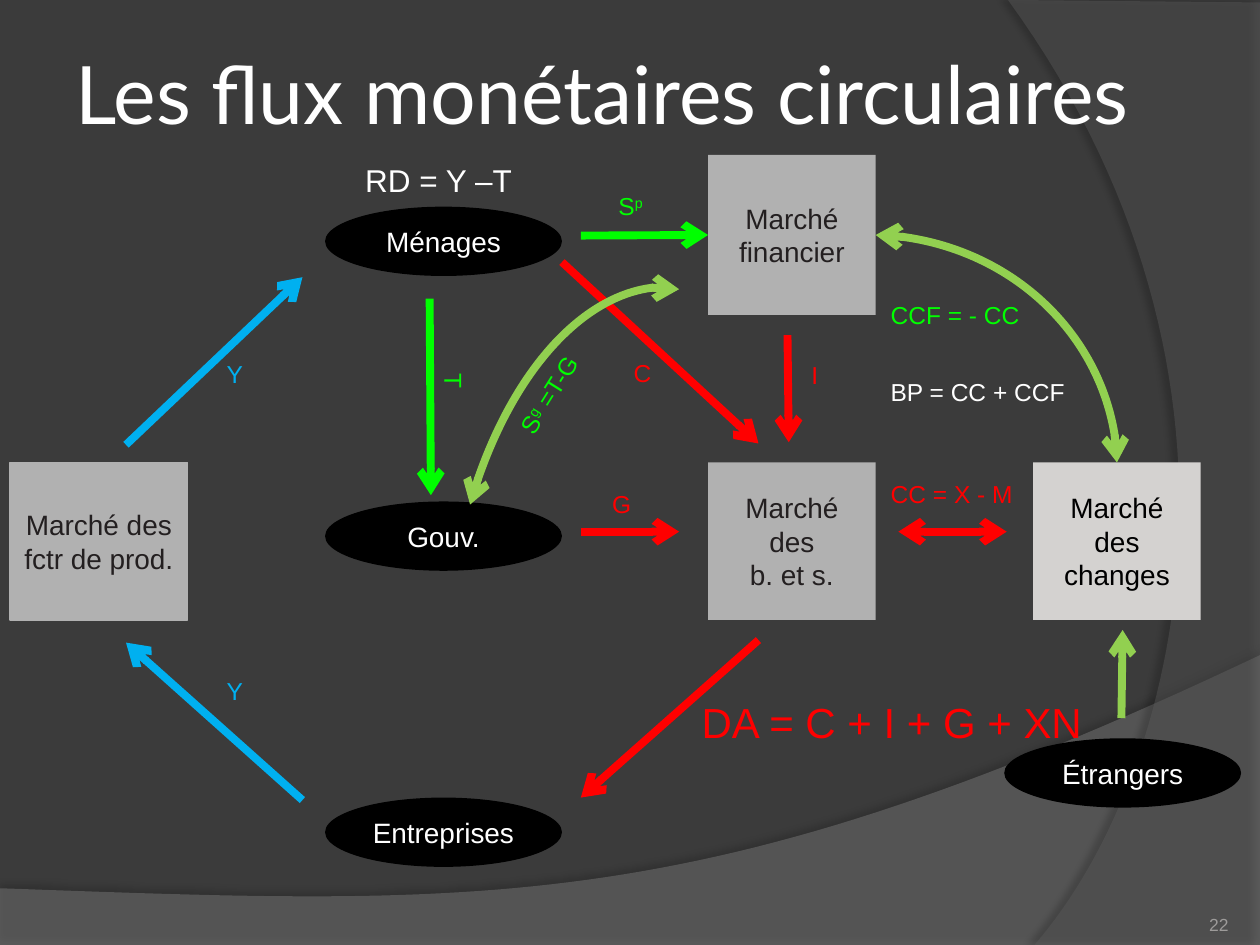
from dataclasses import dataclass
from typing import Any, NamedTuple, Optional

from lxml import etree
from pptx import Presentation
from pptx.dml import color
from pptx.enum import shapes, text
from pptx.oxml import ns
from pptx.util import Inches, Pt


@dataclass(frozen=True)
class Theme:
    font: str = "Arial"
    title_font: str = "Lato"
    back: str = "3B3B3B"
    wave: str = "7F7F7F"
    arc: str = "5E5E5E"
    black: str = "000000"
    white: str = "FFFFFF"
    box: str = "B1B1B1"
    pale_box: str = "D4D2D0"
    box_text: str = "231F20"
    number: str = "9D9B9A"
    red: str = "FF0000"
    green: str = "00FF00"
    lime: str = "92D050"
    blue: str = "00B0F0"
    title_size: float = 46
    sum_size: float = 24
    income_size: float = 18
    node_size: float = 16
    label_size: float = 14
    number_size: float = 10
    arrow_width: float = 4.5


T = Theme()
Point = tuple[float, float]
Box = tuple[float, float, float, float]


class Node(NamedTuple):
    text: str
    at: Box
    fill: str = T.box
    ink: str = T.box_text
    kind: Any = shapes.MSO_SHAPE.RECTANGLE
    outline: Optional[str] = None


class Flow(NamedTuple):
    start: Point
    end: Point
    ink: str
    both: bool = False
    curved: bool = False
    turn: int = 0
    begin_at: Optional[tuple[str, int]] = None
    end_at: Optional[tuple[str, int]] = None


class Label(NamedTuple):
    text: str
    at: Box
    ink: str
    size: float = T.label_size
    font: str = T.font
    turn: int = 0
    wrap: bool = True


class Swoosh(NamedTuple):
    corners: list[Point]
    curve: tuple[Point, Point, Point, Point]
    fill: str
    alpha: int
    shadow_alpha: int
    distance: float
    direction: int


def actor(name: str, left: float, top: float) -> Node:
    return Node(name, (left, top, 1.88, 0.55), T.black, T.white, shapes.MSO_SHAPE.OVAL)


SWOOSHES = [
    Swoosh([(0, 7.5), (10, 7.5)], ((10, 5.2), (5.59, 7.29), (3.91, 7.19), (0, 7.05)),
           T.wave, 45, 35, 3.5, 270),
    Swoosh([(10, 0.02), (10, 7.5)], ((8.21, 7.5), (9.35, 6.19), (10.18, 3), (8, 0)),
           T.arc, 40, 45, 4, 180),
]

NODES = [
    actor("Entreprises", 2.58, 6.33),
    actor("Gouv.", 2.58, 3.98),
    actor("Ménages", 2.58, 1.64),
    actor("Étrangers", 7.97, 5.86),
    Node("Marché des\nb. et s.", (5.62, 3.67, 1.33, 1.25)),
    Node("Marché financier", (5.62, 1.23, 1.33, 1.27)),
    Node("Marché des fctr de prod.", (0.08, 3.67, 1.41, 1.25), outline=T.box),
    Node("Marché des changes", (8.2, 3.67, 1.33, 1.25), T.pale_box, T.black),
]

FLOWS = [
    Flow((3.41, 2.37), (3.42, 3.93), T.green),
    Flow((4.61, 1.87), (5.62, 1.87), T.green, end_at=("Marché financier", 1)),
    Flow((6.25, 2.66), (6.26, 3.51), T.red),
    Flow((6.02, 5.08), (4.61, 6.33), T.red),
    Flow((4.61, 4.22), (5.39, 4.22), T.red),
    Flow((4.46, 2.08), (6.02, 3.52), T.red),
    Flow((2.4, 6.35), (1, 5.1), T.blue),
    Flow((1, 3.53), (2.4, 2.2), T.blue),
    Flow((8.9, 5.7), (8.91, 5), T.lime),
    Flow((7.13, 4.22), (7.99, 4.22), T.red, both=True),
    Flow((6.95, 1.87), (8.87, 3.67), T.lime, both=True, curved=True,
         begin_at=("Marché financier", 3), end_at=("Marché des changes", 0)),
    Flow((3.52, 2.57), (5.6, 3.73), T.lime, both=True, curved=True, turn=285),
]

LABELS = [
    Label("T", (3.22, 3.08, 0.76, 0.34), T.green, turn=90),
    Label("S^p", (4.81, 1.47, 0.51, 0.49), T.green),
    Label("I", (6.34, 2.81, 0.39, 0.33), T.red),
    Label("DA = C + I + G + XN", (5.47, 5.48, 3.44, 0.51), T.red, T.sum_size),
    Label("G", (4.76, 3.83, 0.39, 0.33), T.red),
    Label("C", (4.93, 2.79, 0.34, 0.34), T.red),
    Label("Y", (1.7, 5.32, 0.33, 0.33), T.blue, wrap=False),
    Label("Y", (1.7, 2.8, 0.33, 0.33), T.blue, wrap=False),
    Label("CC = X - M", (6.97, 3.75, 1.18, 0.33), T.red),
    Label("CCF = - CC", (6.97, 2.33, 1.34, 0.34), T.green),
    Label("BP = CC + CCF", (6.97, 2.94, 1.73, 0.34), T.white),
    Label("RD = Y –T", (2.8, 1.23, 1.44, 0.4), T.white, T.income_size, wrap=False),
    Label("S^g^ =T-G", (3.88, 2.9, 1.03, 0.34), T.green, turn=302),
    Label("Les flux monétaires circulaires", (0.5, 0.3, 8.67, 1.25), T.white,
          T.title_size, T.title_font),
]


def rgb(code: str) -> color.RGBColor:
    return color.RGBColor.from_string(code)


def add_xml(parent: Any, tag: str, **attrs: Any) -> Any:
    return etree.SubElement(parent, ns.qn(tag), {k: str(v) for k, v in attrs.items()})


def write(tf: Any, content: str, ink: str, size: float, font: str = T.font,
          align: Any = text.PP_ALIGN.LEFT) -> None:
    for i, line in enumerate(content.split("\n")):
        p = tf.paragraphs[0] if i == 0 else tf.add_paragraph()
        p.alignment = align
        for j, part in enumerate(line.split("^")):
            r = p.add_run()
            r.text = part
            for key, value in {"name": font, "size": Pt(size)}.items():
                setattr(r.font, key, value)
            r.font.color.rgb = rgb(ink)
            if j % 2:
                r._r.get_or_add_rPr().set("baseline", "30000")


def bezier(points: tuple[Point, Point, Point, Point], steps: int = 60) -> list[Point]:
    a, b, c, d = points
    return [tuple((1 - t) ** 3 * a[k] + 3 * t * (1 - t) ** 2 * b[k]
                  + 3 * t * t * (1 - t) * c[k] + t ** 3 * d[k] for k in (0, 1))
            for t in (i / steps for i in range(steps + 1))]


def draw_swoosh(s: Any, w: Swoosh) -> None:
    first, *rest = [(Inches(x), Inches(y)) for x, y in w.corners + bezier(w.curve)]
    builder = s.shapes.build_freeform(*first)
    builder.add_line_segments(rest, close=True)
    sp = builder.convert_to_shape()
    sp.fill.solid()
    sp.fill.fore_color.rgb = rgb(w.fill)
    sp.line.fill.background()
    sp.shadow.inherit = False
    pr = sp._element.spPr
    add_xml(pr.find(".//" + ns.qn("a:srgbClr")), "a:alpha", val=w.alpha * 1000)
    shadow = add_xml(pr.find(ns.qn("a:effectLst")), "a:outerShdw", blurRad=Pt(4),
                     dist=Pt(w.distance), dir=w.direction * 60000)
    add_xml(add_xml(shadow, "a:srgbClr", val=T.black), "a:alpha", val=w.shadow_alpha * 1000)


def draw_node(s: Any, n: Node) -> Any:
    sp = s.shapes.add_shape(n.kind, *map(Inches, n.at))
    sp.shadow.inherit = False
    sp.fill.solid()
    sp.fill.fore_color.rgb = rgb(n.fill)
    if n.outline:
        sp.line.color.rgb = rgb(n.outline)
        sp.line.width = Pt(0.75)
    else:
        sp.line.fill.background()
    sp.text_frame.vertical_anchor = text.MSO_ANCHOR.MIDDLE
    write(sp.text_frame, n.text, n.ink, T.node_size, align=text.PP_ALIGN.CENTER)
    return sp


def draw_flow(s: Any, f: Flow, nodes: dict[str, Any]) -> None:
    kind = shapes.MSO_CONNECTOR.CURVE if f.curved else shapes.MSO_CONNECTOR.STRAIGHT
    cx = s.shapes.add_connector(kind, *map(Inches, f.start + f.end))
    if f.begin_at:
        cx.begin_connect(nodes[f.begin_at[0]], f.begin_at[1])
    if f.end_at:
        cx.end_connect(nodes[f.end_at[0]], f.end_at[1])
    cx.line.color.rgb = rgb(f.ink)
    cx.line.width = Pt(T.arrow_width)
    pr = cx._element.spPr
    if f.curved:
        pr.find(ns.qn("a:prstGeom")).set("prst", "curvedConnector2")
    if f.turn:
        pr.find(ns.qn("a:xfrm")).set("rot", str(f.turn * 60000))
    for end in ("a:headEnd", "a:tailEnd") if f.both else ("a:tailEnd",):
        add_xml(pr.find(ns.qn("a:ln")), end, type="arrow")
    add_xml(pr, "a:effectLst")


def draw_label(s: Any, n: Label) -> None:
    sp = s.shapes.add_textbox(*map(Inches, n.at))
    sp.rotation = n.turn
    sp.text_frame.word_wrap = n.wrap
    write(sp.text_frame, n.text, n.ink, n.size, n.font)


def draw_number(s: Any) -> None:
    tf = s.shapes.add_textbox(*map(Inches, (8.92, 7.02, 0.83, 0.4))).text_frame
    margins = {f"margin_{side}": 0 for side in ("left", "right", "top", "bottom")}
    for key, value in {**margins, "vertical_anchor": text.MSO_ANCHOR.BOTTOM,
                       "word_wrap": True}.items():
        setattr(tf, key, value)
    write(tf, "22", T.number, T.number_size, align=text.PP_ALIGN.RIGHT)


def main() -> None:
    prs = Presentation()
    prs.slide_width, prs.slide_height = Inches(10), Inches(7.5)
    s = prs.slides.add_slide(prs.slide_layouts[6])
    s.background.fill.solid()
    s.background.fill.fore_color.rgb = rgb(T.back)
    for w in SWOOSHES:
        draw_swoosh(s, w)
    draw_number(s)
    nodes = {n.text: draw_node(s, n) for n in NODES}
    for f in FLOWS:
        draw_flow(s, f, nodes)
    for n in LABELS:
        draw_label(s, n)
    prs.save("out.pptx")


if __name__ == "__main__":
    main()
